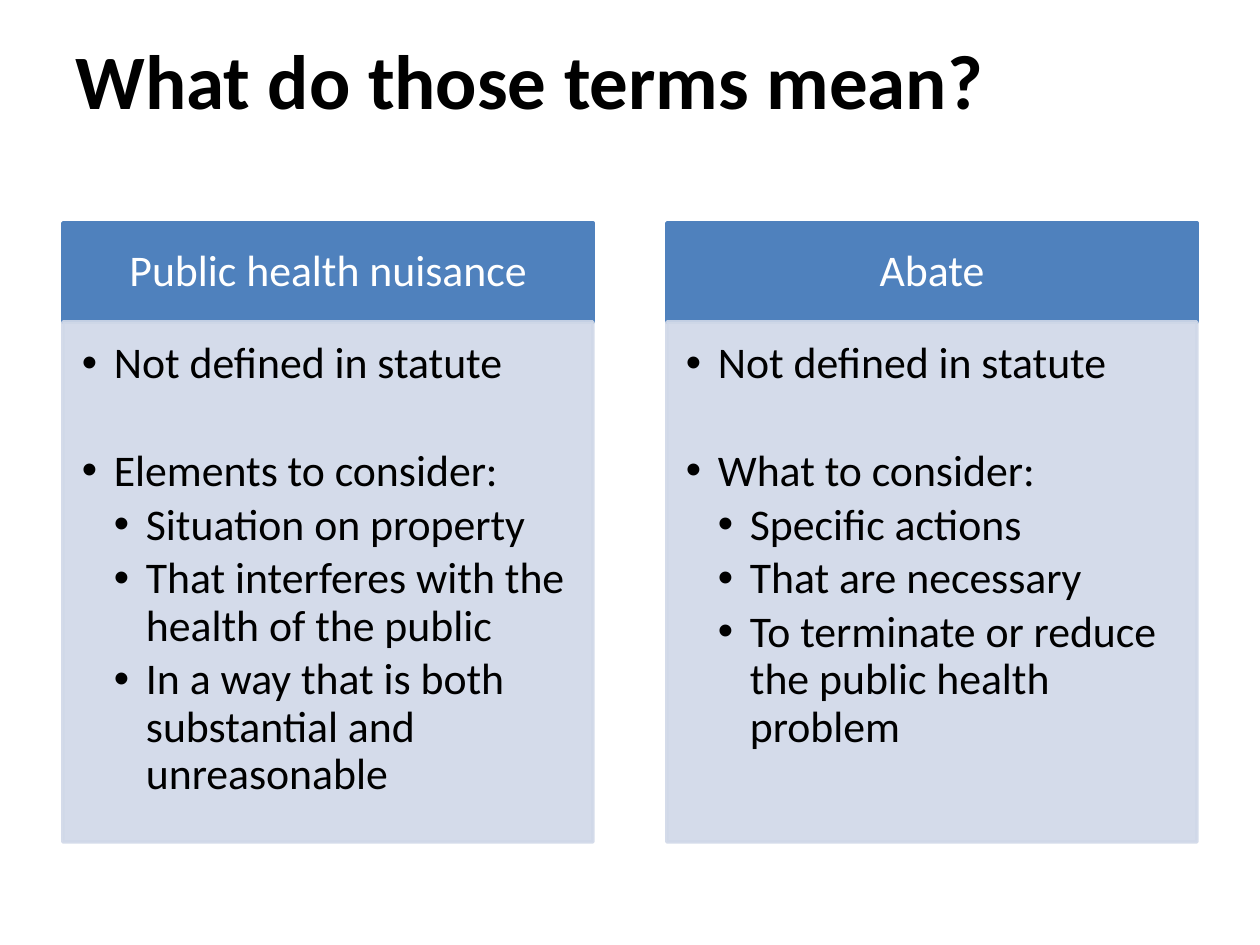
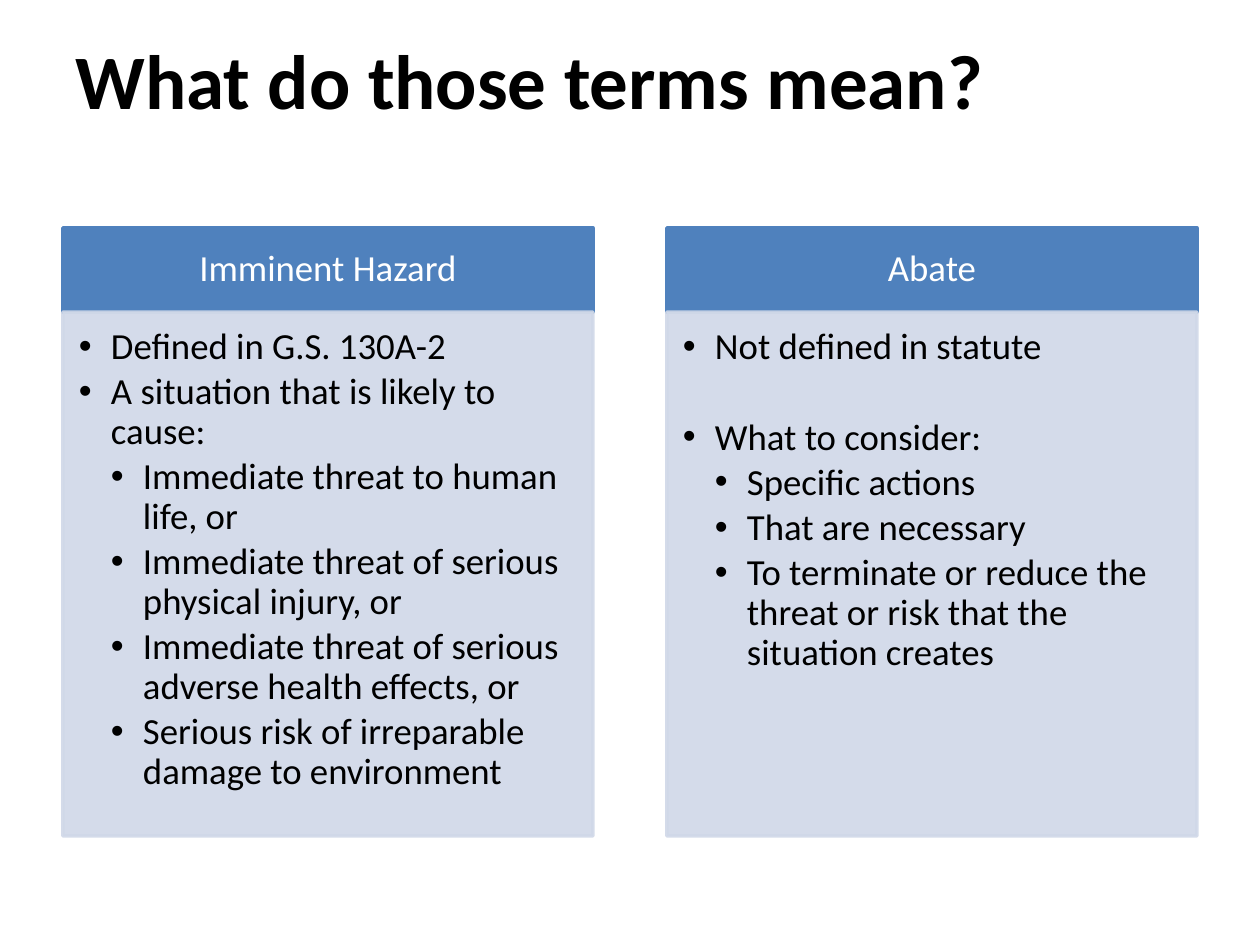
import pptx
import pptx.util
import pptx.dml.color
import pptx.enum.shapes
import pptx.enum.text
from dataclasses import dataclass
from lxml import etree

RGB = pptx.dml.color.RGBColor
ALIGN = pptx.enum.text.PP_ALIGN
ANCHOR = pptx.enum.text.MSO_ANCHOR
SCALE = 914400 / 126
NS = "http://schemas.openxmlformats.org/drawingml/2006/main"


@dataclass(frozen=True)
class Theme:
    font: str = "Calibri"
    ink: RGB = RGB(0x00, 0x00, 0x00)
    white: RGB = RGB(0xFF, 0xFF, 0xFF)
    head: RGB = RGB(0x4F, 0x81, 0xBD)
    body: RGB = RGB(0xD0, 0xD8, 0xE8)
    alpha: int = 90
    title: int = 44
    large: int = 25
    small: int = 21


theme = Theme()


def px(n):
    return pptx.util.Emu(round(n * SCALE))


def panel(slide, box, color, alpha, insets):
    """Add a filled rectangle and return its text frame."""
    kind = pptx.enum.shapes.MSO_SHAPE.RECTANGLE
    shape = slide.shapes.add_shape(kind, *map(px, box))
    shape.shadow.inherit = False
    shape.line.width = pptx.util.Pt(2)
    for fill in (shape.fill, shape.line.fill):
        fill.solid()
        fill.fore_color.rgb = color
    if alpha < 100:
        for tint in shape._element.spPr.iter(f"{{{NS}}}srgbClr"):
            etree.SubElement(tint, f"{{{NS}}}alpha", val=str(alpha * 1000))
    frame = shape.text_frame
    frame.word_wrap = True
    (frame.margin_left, frame.margin_top,
     frame.margin_right, frame.margin_bottom) = map(px, insets)
    return frame


# Content: each point is level, text, and whether a line's gap comes before it
steps = [
    (1, "Not defined in statute", False),
    (1, "What to consider:", True),
    (2, "Specific actions", False),
    (2, "That are necessary", False),
]
pages = [
    # type size, head top, head height, body height, columns
    (theme.large, 223, 99, 520, [
        ("Public health nuisance", [
            (1, "Not defined in statute", False),
            (1, "Elements to consider:", True),
            (2, "Situation on property", False),
            (2, "That interferes with the health of the public", False),
            (2, "In a way that is both substantial and unreasonable", False),
        ]),
        ("Abate", steps + [
            (2, "To terminate or reduce the public health problem", False),
        ]),
    ]),
    (theme.small, 228, 84, 524, [
        ("Imminent Hazard", [
            (1, "Defined in G.S. 130A-2", False),
            (1, "A situation that is likely to cause:", False),
            (2, "Immediate threat to human life, or", False),
            (2, "Immediate threat of serious physical injury, or", False),
            (2, "Immediate threat of serious adverse health effects, or", False),
            (2, "Serious risk of irreparable damage to environment", False),
        ]),
        ("Abate", steps + [
            (2, "To terminate or reduce the threat or risk that the "
                "situation creates", False),
        ]),
    ]),
]

# Grid of two columns
LEFT, WIDE, GAP, INDENT = 63, 530, 74, 32

deck = pptx.Presentation()
deck.slide_width, deck.slide_height = px(1260), px(945)

for size, top, high, deep, columns in pages:
    slide = deck.slides.add_slide(deck.slide_layouts[5])

    # Title
    title = slide.shapes.title
    title.left, title.top, title.width, title.height = map(px, (LEFT, 0, 1134, 158))
    frame = title.text_frame
    frame.text = "What do those terms mean?"
    frame.auto_size = pptx.enum.text.MSO_AUTO_SIZE.NONE
    frame.vertical_anchor = ANCHOR.MIDDLE
    para = frame.paragraphs[0]
    para.alignment = ALIGN.LEFT
    para.font.name, para.font.size = theme.font, pptx.util.Pt(theme.title)
    para.font.bold, para.font.color.rgb = True, theme.ink

    # Insets grow with the type size
    side, edge = round(size * 0.96), round(size * 0.56)
    near, foot = round(size * 0.75), round(size * 1.12)

    for col, (name, points) in enumerate(columns):
        left = LEFT + col * (WIDE + GAP)

        # Column head
        frame = panel(slide, (left, top, WIDE, high), theme.head, 100,
                      (side, edge, side, edge))
        frame.vertical_anchor = ANCHOR.MIDDLE
        para = frame.paragraphs[0]
        para.text = name
        para.alignment = ALIGN.CENTER
        para.line_spacing = 0.9
        para.font.name, para.font.size = theme.font, pptx.util.Pt(size)
        para.font.color.rgb = theme.white

        # Column body
        frame = panel(slide, (left, top + high, WIDE, deep), theme.body,
                      theme.alpha, (near, near, side, foot))
        frame.vertical_anchor = ANCHOR.TOP
        for row, (level, text, gap) in enumerate(points):
            para = frame.add_paragraph() if row else frame.paragraphs[0]
            para.text = text
            para.level = level
            para.alignment = ALIGN.LEFT
            para.line_spacing = 0.9
            para.space_after = pptx.util.Pt(size * 0.15)
            if gap:
                para.space_before = pptx.util.Pt(size * 1.23)
            props = para._p.get_or_add_pPr()
            props.set("marL", str(px(INDENT * level)))
            props.set("indent", str(px(-INDENT)))
            etree.SubElement(props, f"{{{NS}}}buFont", typeface="Arial")
            etree.SubElement(props, f"{{{NS}}}buChar", char="•")
            para.font.name, para.font.size = theme.font, pptx.util.Pt(size)
            para.font.color.rgb = theme.ink

deck.save("out.pptx")
